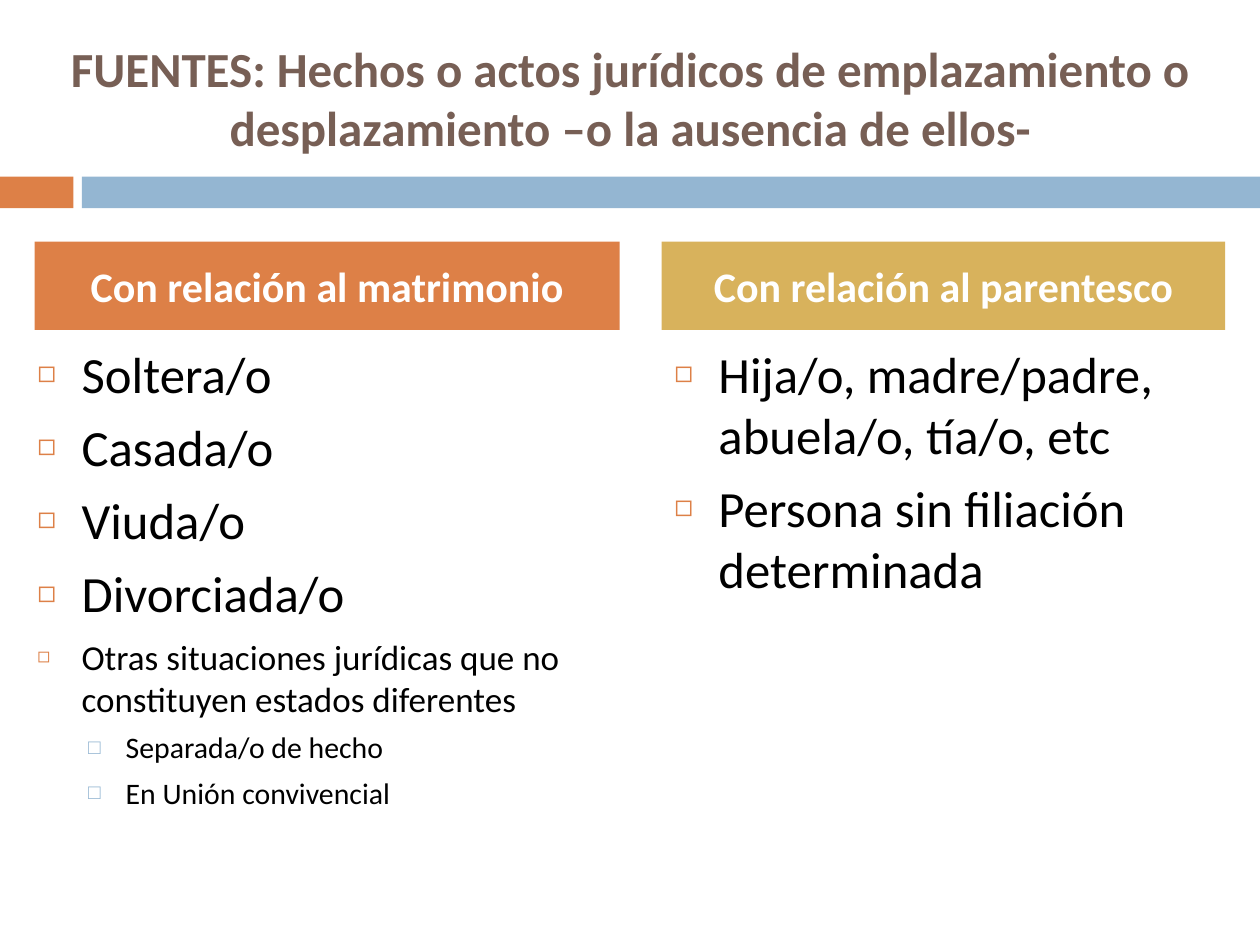
from dataclasses import dataclass

from lxml.etree import SubElement
from pptx import Presentation
from pptx.dml.color import RGBColor
from pptx.enum.shapes import MSO_SHAPE
from pptx.enum.text import MSO_ANCHOR, MSO_AUTO_SIZE, PP_ALIGN
from pptx.oxml.ns import qn
from pptx.util import Cm, Pt


@dataclass(frozen=True)
class Theme:
    font: str = "Calibri"
    orange: str = "DD8047"
    blue: str = "94B6D2"
    gold: str = "D8B25C"
    brown: str = "775F55"
    black: str = "000000"
    white: str = "FFFFFF"
    title_size: float = 28
    heading_size: float = 24
    item_size: float = 29
    note_size: float = 20
    subitem_size: float = 17


@dataclass(frozen=True)
class Bullet:
    character: str
    color: str
    percent: int
    margin: float
    hanging: float
    space_before: float


THEME = Theme()
BULLETS = (
    Bullet("◻", THEME.orange, 60, 0.89, 0.89, 7),
    Bullet("□", THEME.blue, 70, 1.78, 0.76, 5.5),
)

TITLE = "FUENTES: Hechos o actos jurídicos de emplazamiento o desplazamiento –o la ausencia de ellos-"
# Each item: text, level, size
MARRIAGE_ITEMS = [
    *((status, 0, THEME.item_size) for status in ("Soltera/o", "Casada/o", "Viuda/o", "Divorciada/o")),
    ("Otras situaciones jurídicas que no constituyen estados diferentes", 0, THEME.note_size),
    ("Separada/o de hecho", 1, THEME.subitem_size),
    ("En Unión convivencial", 1, THEME.subitem_size),
]
KINSHIP_ITEMS = [
    ("Hija/o, madre/padre, abuela/o, tía/o, etc", 0, THEME.item_size),
    ("Persona sin filiación determinada", 0, THEME.item_size),
]


def place(shape, left, top, width, height):
    shape.left, shape.top = Cm(left), Cm(top)
    shape.width, shape.height = Cm(width), Cm(height)


def fill_solid(shape, color):
    shape.fill.solid()
    shape.fill.fore_color.rgb = RGBColor.from_string(color)


def add_run(paragraph, text, size, color, bold=False):
    run = paragraph.add_run()
    run.text = text
    font = run.font
    font.name, font.size, font.bold = THEME.font, Pt(size), bold
    font.color.rgb = RGBColor.from_string(color)


def prepare_frame(shape, anchor):
    frame = shape.text_frame
    frame.word_wrap = True
    frame.auto_size = MSO_AUTO_SIZE.NONE
    frame.vertical_anchor = anchor
    return frame


def add_bar(slide, color, *box):
    bar = slide.shapes.add_shape(MSO_SHAPE.RECTANGLE, *map(Cm, box))
    bar.shadow.inherit = False
    fill_solid(bar, color)
    bar.line.fill.background()


def write_centered(placeholder, text, size, color, box):
    place(placeholder, *box)
    paragraph = prepare_frame(placeholder, MSO_ANCHOR.MIDDLE).paragraphs[0]
    paragraph.alignment = PP_ALIGN.CENTER
    paragraph.space_before = Pt(0)
    add_run(paragraph, text, size, color, bold=True)


def set_bullet(paragraph, bullet):
    properties = paragraph._p.get_or_add_pPr()
    properties.set("marL", str(Cm(bullet.margin)))
    properties.set("indent", str(-Cm(bullet.hanging)))
    color = SubElement(properties, qn("a:buClr"))
    SubElement(color, qn("a:srgbClr"), val=bullet.color)
    SubElement(properties, qn("a:buSzPct"), val=str(bullet.percent * 1000))
    SubElement(properties, qn("a:buChar"), char=bullet.character)


def write_list(placeholder, items, box):
    place(placeholder, *box)
    frame = prepare_frame(placeholder, MSO_ANCHOR.TOP)
    for index, (text, level, size) in enumerate(items):
        paragraph = frame.add_paragraph() if index else frame.paragraphs[0]
        bullet = BULLETS[level]
        paragraph.level = level
        set_bullet(paragraph, bullet)
        paragraph.space_before = Pt(bullet.space_before if index else 0)
        add_run(paragraph, text, size, THEME.black)


def main():
    presentation = Presentation()
    presentation.slide_width, presentation.slide_height = Cm(25.4), Cm(19.05)
    comparison_layout = presentation.slide_layouts[4]
    slide = presentation.slides.add_slide(comparison_layout)
    title, left_heading, left_list, right_heading, right_list = slide.placeholders

    add_bar(slide, THEME.orange, 0, 3.56, 1.48, 0.64)
    add_bar(slide, THEME.blue, 1.65, 3.56, 23.75, 0.64)
    write_centered(title, TITLE, THEME.title_size, THEME.brown, (0.5, 0.76, 24.4, 2.42))

    write_list(left_list, MARRIAGE_ITEMS, (0.5, 6.78, 12, 11.76))
    write_list(right_list, KINSHIP_ITEMS, (13.34, 6.78, 10.8, 9.96))

    headings = (
        (left_heading, "Con relación al matrimonio", THEME.orange, 0.7, 11.79),
        (right_heading, "Con relación al parentesco", THEME.gold, 13.34, 11.36),
    )
    for placeholder, text, color, left, width in headings:
        fill_solid(placeholder, color)
        write_centered(placeholder, text, THEME.heading_size, THEME.white, (left, 4.87, width, 1.78))

    presentation.save("out.pptx")


if __name__ == "__main__":
    main()
